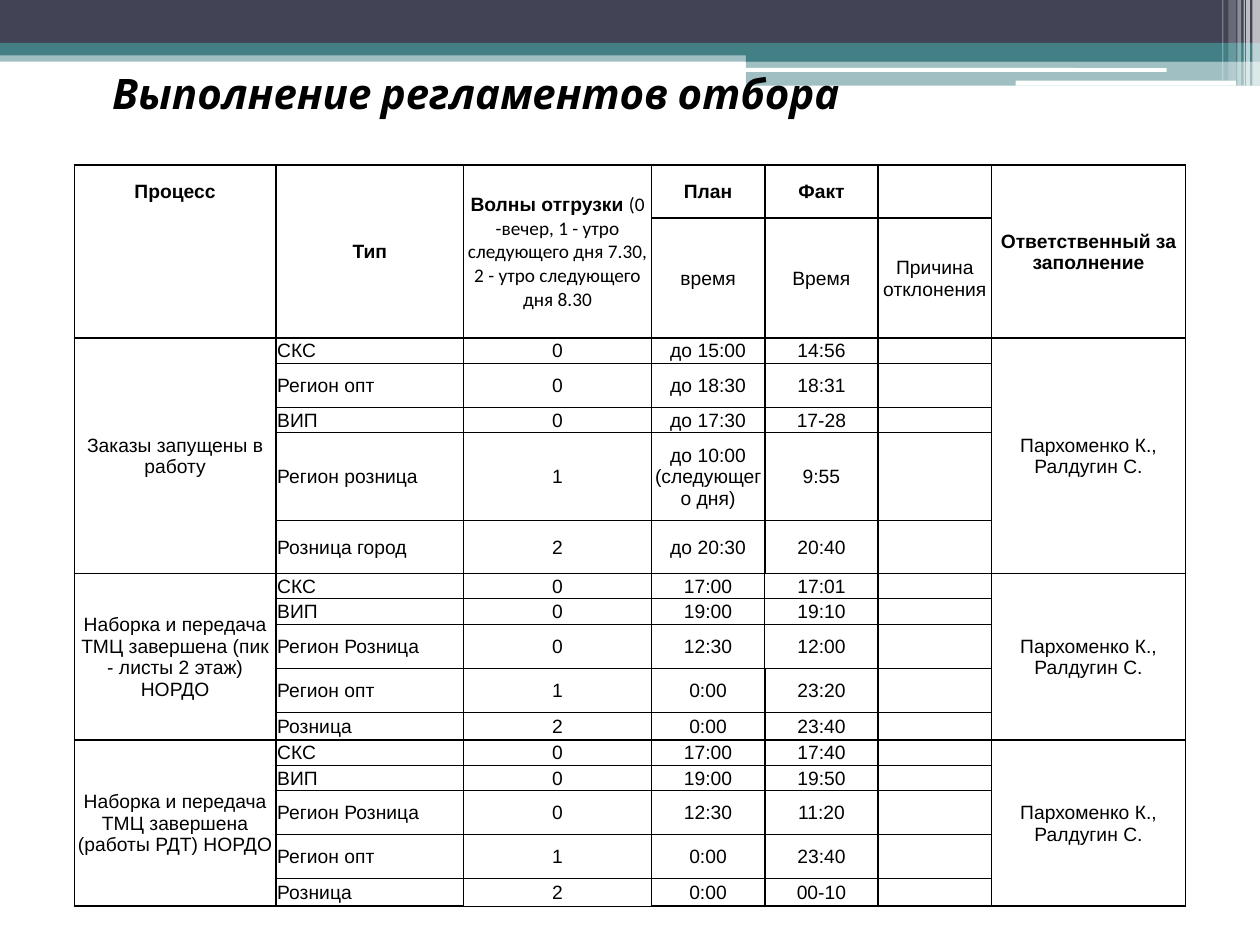
from dataclasses import dataclass
from itertools import accumulate

from lxml import etree
from pptx import Presentation
from pptx import util as u
from pptx.dml import color
from pptx.enum import shapes, text
from pptx.oxml import ns


@dataclass(frozen=True)
class Theme:
    ink: str = "000000"
    paper: str = "FFFFFF"
    navy: str = "424456"
    teal: str = "438086"
    title_font: str = "Cabin"
    body_font: str = "Arial"
    note_font: str = "Calibri"
    title_size: float = 24
    body_size: float = 11
    thick: float = 1
    thin: float = 0.5


THEME = Theme()
WIDTH, HEIGHT = 10, 7.5
TITLE = "Выполнение регламентов отбора"
TITLE_AREA = (0.79, 0.68, 8.5, 0.31)

BANDS = [
    (0, 0.4, 10, 0.09, THEME.teal, 50),
    (0, 0, 10, 0.34, THEME.navy, 100),
    (0, 0.34, 10, 0.1, THEME.teal, 100),
    (5.92, 0.39, 4.08, 0.1, THEME.teal, 100),
    (5.92, 0.48, 4.08, 0.2, THEME.teal, 50),
]
PILLS = [
    (5.91, 0.54, 3.35, 0.03, THEME.paper, 100),
    (8.06, 0.64, 1.75, 0.04, THEME.paper, 100),
]
STRIPES = [
    (9.94, 0, 0.06, 0.68, THEME.paper, 65),
    (9.89, 0, 0.03, 0.68, THEME.paper, 65),
    (9.87, 0, 0.01, 0.68, THEME.paper, 60),
    (9.82, 0, 0.03, 0.68, THEME.paper, 40),
    (9.75, 0, 0.06, 0.64, THEME.paper, 20),
    (9.7, 0, 0.01, 0.64, THEME.paper, 30),
]

HEADINGS = ["Процесс", "Тип", "Волны отгрузки ", "План", "Факт", "",
            "Ответственный за заполнение"]
WAVE_NOTE = "(0 -вечер, 1 - утро следующего дня 7.30, 2 - утро следующего дня 8.30"
SUBHEADINGS = ["", "", "", "время", "Время", "Причина отклонения", ""]
OWNERS = "Пархоменко К., Ралдугин С."
GROUPS = [
    ("Заказы запущены в работу", [
        ("СКС", "0", "до 15:00", "14:56"),
        ("Регион опт", "0", "до 18:30", "18:31"),
        ("ВИП", "0", "до 17:30", "17-28"),
        ("Регион розница", "1", "до 10:00 (следующего дня)", "9:55"),
        ("Розница город", "2", "до 20:30", "20:40"),
    ]),
    ("Наборка и передача ТМЦ завершена (пик - листы 2 этаж) НОРДО", [
        ("СКС", "0", "17:00", "17:01"),
        ("ВИП", "0", "19:00", "19:10"),
        ("Регион Розница", "0", "12:30", "12:00"),
        ("Регион опт", "1", "0:00", "23:20"),
        ("Розница", "2", "0:00", "23:40"),
    ]),
    ("Наборка и передача ТМЦ завершена (работы РДТ) НОРДО", [
        ("СКС", "0", "17:00", "17:40"),
        ("ВИП", "0", "19:00", "19:50"),
        ("Регион Розница", "0", "12:30", "11:20"),
        ("Регион опт", "1", "0:00", "23:40"),
        ("Розница", "2", "0:00", "00-10"),
    ]),
]
TABLE_CORNER = (0.59, 1.31)
COLUMNS = [1.6, 1.49, 1.49, 0.9, 0.9, 0.9, 1.54]
HEADER_ROWS = [0.42, 0.57]
GROUP_ROWS = [[0.2, 0.35, 0.2, 0.7, 0.42]] + [[0.2, 0.2, 0.35, 0.35, 0.22]] * 2
ROWS = HEADER_ROWS + sum(GROUP_ROWS, [])
STARTS = list(accumulate([len(HEADER_ROWS)] + [len(rows) for _, rows in GROUPS]))
THIN_CELLS = {(7, 3), (8, 3), (9, 3), (16, 2)}
PROCESS, KIND, WAVE, OWNER = 0, 1, 2, 6


def inches(*lengths):
    return [u.Inches(length) for length in lengths]


def write(para, words, font=THEME.body_font, size=THEME.body_size, bold=False,
          italic=False, align=text.PP_ALIGN.CENTER):
    para.alignment = align
    span = para.add_run()
    span.text = words
    span.font.name, span.font.size = font, u.Pt(size)
    span.font.bold, span.font.italic = bold, italic
    span.font.color.rgb = color.RGBColor.from_string(THEME.ink)


def decorate(page, pieces, preset):
    for *area, tone, opacity in pieces:
        box = page.shapes.add_shape(preset, *inches(*area))
        box.shadow.inherit = False
        box.line.fill.background()
        box.fill.solid()
        box.fill.fore_color.rgb = color.RGBColor.from_string(tone)
        if opacity < 100:
            tint = box.fill._xPr.find(".//" + ns.qn("a:srgbClr"))
            etree.SubElement(tint, ns.qn("a:alpha"), val=str(opacity * 1000))


def add_title(page):
    title = page.shapes.title
    title.left, title.top, title.width, title.height = inches(*TITLE_AREA)
    frame = title.text_frame
    frame.auto_size = text.MSO_AUTO_SIZE.NONE
    frame.vertical_anchor = text.MSO_ANCHOR.BOTTOM
    write(frame.paragraphs[0], TITLE, font=THEME.title_font, size=THEME.title_size,
          bold=True, italic=True, align=text.PP_ALIGN.LEFT)
    page.shapes._spTree.append(title._element)


def edge_width(row, column, side, merged):
    step = {"L": (0, -1), "R": (0, 1), "T": (-1, 0), "B": (1, 0)}[side]
    neighbour = (row + step[0], column + step[1])
    boundary = row + (side == "B")
    if column == PROCESS and boundary == 1 and side in "TB":
        return 0
    if {(row, column), neighbour} & THIN_CELLS:
        return THEME.thin
    if merged or side in "LR" or boundary in [0, 1] + STARTS:
        return THEME.thick
    return THEME.thin


def draw_edges(cell, row, column):
    properties = cell._tc.get_or_add_tcPr()
    for side in "LRTB":
        width = edge_width(row, column, side, cell.is_merge_origin)
        line = etree.SubElement(properties, ns.qn("a:ln" + side), w=str(u.Pt(width)))
        if width:
            fill = etree.SubElement(line, ns.qn("a:solidFill"))
            etree.SubElement(fill, ns.qn("a:srgbClr"), val=THEME.ink)
        else:
            etree.SubElement(line, ns.qn("a:noFill"))


def fill_cell(cell, words, row, column):
    cell.vertical_anchor = text.MSO_ANCHOR.MIDDLE
    cell.margin_left = cell.margin_right = cell.margin_top = u.Inches(0.01)
    cell.margin_bottom = 0
    para = cell.text_frame.paragraphs[0]
    if words:
        left = column == KIND and row >= STARTS[0]
        write(para, words, bold=row == 0,
              align=text.PP_ALIGN.LEFT if left else text.PP_ALIGN.CENTER)
    else:
        etree.SubElement(para._p, ns.qn("a:endParaRPr"), sz=str(THEME.body_size * 100))
    if (row, column) == (0, WAVE):
        write(para, WAVE_NOTE, font=THEME.note_font)
    if not cell.is_spanned:
        draw_edges(cell, row, column)
    cell.fill.background()


def add_schedule(page):
    area = (*TABLE_CORNER, sum(COLUMNS), sum(ROWS))
    table = page.shapes.add_table(len(ROWS), len(COLUMNS), *inches(*area)).table
    table.first_row = table.horz_banding = False
    for line, length in zip(table.columns, COLUMNS):
        line.width = u.Inches(length)
    for line, length in zip(table.rows, ROWS):
        line.height = u.Inches(length)
    for column in (KIND, WAVE, OWNER):
        table.cell(0, column).merge(table.cell(1, column))
    for start, end in zip(STARTS, STARTS[1:]):
        for column in (PROCESS, OWNER):
            table.cell(start, column).merge(table.cell(end - 1, column))
    content = [HEADINGS, SUBHEADINGS]
    for process, entries in GROUPS:
        for index, entry in enumerate(entries):
            first = index == 0
            content.append([process if first else "", *entry, "", OWNERS if first else ""])
    for row, values in enumerate(content):
        for column, words in enumerate(values):
            fill_cell(table.cell(row, column), words, row, column)


def main():
    deck = Presentation()
    deck.slide_width, deck.slide_height = inches(WIDTH, HEIGHT)
    page = deck.slides.add_slide(deck.slide_layouts.get_by_name("Title Only"))
    decorate(page, BANDS, shapes.MSO_SHAPE.RECTANGLE)
    decorate(page, PILLS, shapes.MSO_SHAPE.ROUNDED_RECTANGLE)
    decorate(page, STRIPES, shapes.MSO_SHAPE.RECTANGLE)
    add_title(page)
    add_schedule(page)
    deck.save("out.pptx")


if __name__ == "__main__":
    main()
